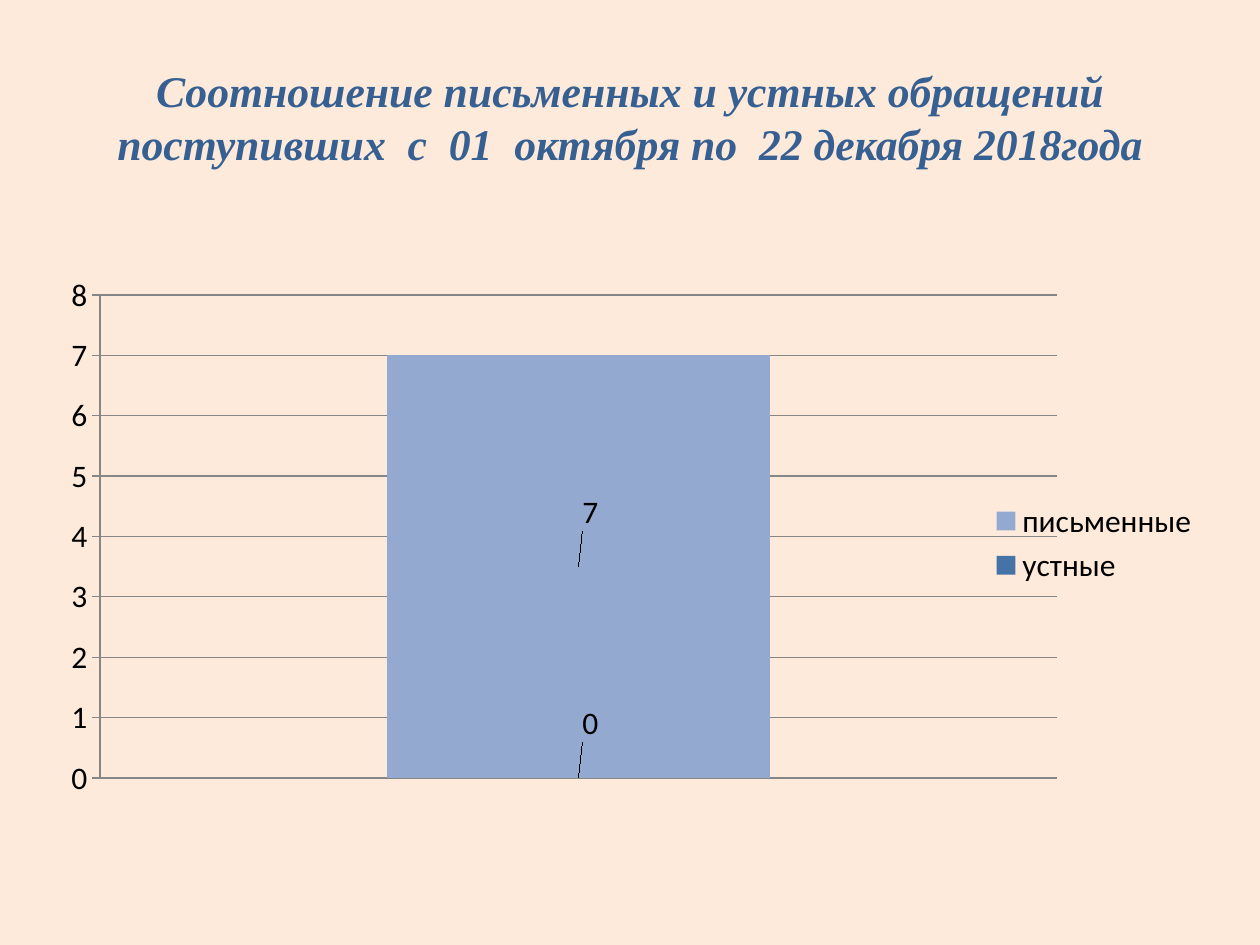
from dataclasses import dataclass

from lxml import etree
from pptx import Presentation
from pptx.chart.data import CategoryChartData
from pptx.dml.color import RGBColor
from pptx.enum.chart import (XL_CHART_TYPE, XL_LABEL_POSITION,
                             XL_LEGEND_POSITION, XL_TICK_MARK)
from pptx.enum.text import MSO_ANCHOR, PP_ALIGN
from pptx.util import Inches, Pt

STACKED = XL_CHART_TYPE.COLUMN_STACKED
LABEL_CENTER = XL_LABEL_POSITION.CENTER
LEGEND_RIGHT = XL_LEGEND_POSITION.RIGHT
TICK_OUTSIDE = XL_TICK_MARK.OUTSIDE
MIDDLE = MSO_ANCHOR.MIDDLE
CENTER = PP_ALIGN.CENTER
CHART_NS = "http://schemas.openxmlformats.org/drawingml/2006/chart"
TITLE_ONLY_LAYOUT = 5


@dataclass(frozen=True)
class Theme:
    background: RGBColor = RGBColor(0xFD, 0xEA, 0xDA)
    title: RGBColor = RGBColor(0x37, 0x60, 0x92)
    text: RGBColor = RGBColor(0, 0, 0)
    grid: RGBColor = RGBColor(0x86, 0x86, 0x86)
    oral: RGBColor = RGBColor(0x45, 0x72, 0xA7)
    written: RGBColor = RGBColor(0x93, 0xA9, 0xCF)
    title_font: str = "Times New Roman"
    chart_font: str = "Calibri"
    title_size: Pt = Pt(25)
    chart_size: Pt = Pt(18)
    line_width: Pt = Pt(0.75)


def set_layout(parent, index, **values):
    """Give a chart part a manual layout, as fractions of the chart."""
    for old in parent.findall(f"{{{CHART_NS}}}layout"):
        parent.remove(old)
    layout = etree.Element(f"{{{CHART_NS}}}layout")
    manual = etree.SubElement(layout, f"{{{CHART_NS}}}manualLayout")
    for name, value in values.items():
        etree.SubElement(manual, f"{{{CHART_NS}}}{name}").set("val", str(value))
    parent.insert(index, layout)


class SlideBuilder:
    def __init__(self, presentation, theme):
        self.theme = theme
        self.slide = presentation.slides.add_slide(
            presentation.slide_layouts[TITLE_ONLY_LAYOUT])
        fill = self.slide.background.fill
        fill.solid()
        fill.fore_color.rgb = theme.background

    def add_title(self, text, left, top, width, height):
        title = self.slide.shapes.title
        title.left, title.top = Inches(left), Inches(top)
        title.width, title.height = Inches(width), Inches(height)
        title.text_frame.vertical_anchor = MIDDLE
        paragraph = title.text_frame.paragraphs[0]
        paragraph.alignment = CENTER
        run = paragraph.add_run()
        run.text = text
        run.font.name = self.theme.title_font
        run.font.size = self.theme.title_size
        run.font.bold = run.font.italic = True
        run.font.color.rgb = self.theme.title

    def style_line(self, line):
        line.color.rgb = self.theme.grid
        line.width = self.theme.line_width

    def add_stacked_chart(self, category, rows, left, top, width, height):
        """Each row is a series name, value, colour and label offset."""
        data = CategoryChartData()
        data.categories = [category]
        for name, value, _, _ in rows:
            data.add_series(name, [value])
        chart = self.slide.shapes.add_chart(
            STACKED, Inches(left), Inches(top), Inches(width), Inches(height),
            data).chart
        chart.has_title = False
        chart.font.name = self.theme.chart_font
        chart.font.size = self.theme.chart_size
        chart.font.color.rgb = self.theme.text

        # Columns and their shifted labels
        plot = chart.plots[0]
        plot.gap_width, plot.overlap = 150, 100
        plot.vary_by_categories = False
        for series, (_, _, color, _) in zip(plot.series, rows):
            series.format.fill.solid()
            series.format.fill.fore_color.rgb = color
            series.data_labels.show_value = True
            series.points[0].data_label.position = LABEL_CENTER
        labels = chart.element.xpath(".//c:ser/c:dLbls/c:dLbl")
        for label, (_, _, _, (x, y)) in zip(labels, rows):
            set_layout(label, 1, x=x, y=y)

        # Axes
        chart.category_axis.visible = False
        axis = chart.value_axis
        axis.minimum_scale, axis.maximum_scale, axis.major_unit = 0, 8, 1
        axis.major_tick_mark = TICK_OUTSIDE
        axis.has_major_gridlines = True
        self.style_line(axis.major_gridlines.format.line)
        self.style_line(axis.format.line)

        # Legend and plot area
        chart.has_legend = True
        chart.legend.position = LEGEND_RIGHT
        chart.legend.include_in_layout = False
        set_layout(chart.element.xpath(".//c:legend")[0], 1,
                   xMode="edge", yMode="edge", x=0.81, y=0.4)
        set_layout(chart.element.xpath(".//c:plotArea")[0], 0,
                   layoutTarget="inner", xMode="edge", yMode="edge",
                   x=0.06, y=0.03, w=0.81, h=0.89)


def main():
    presentation = Presentation()
    presentation.slide_width, presentation.slide_height = Inches(10), Inches(7.5)
    theme = Theme()
    builder = SlideBuilder(presentation, theme)
    builder.add_title(
        "Соотношение письменных и устных обращений "
        "поступивших  с  01  октября по  22 декабря 2018года",
        0.5, 0.3, 9, 1.25)
    builder.add_stacked_chart(
        "1",
        [("устные", 0, theme.oral, (0.01, -0.1)),
         ("письменные", 7, theme.written, (0.01, -0.1))],
        0.23, 2.19, 9.38, 4.33)
    presentation.save("out.pptx")


if __name__ == "__main__":
    main()
